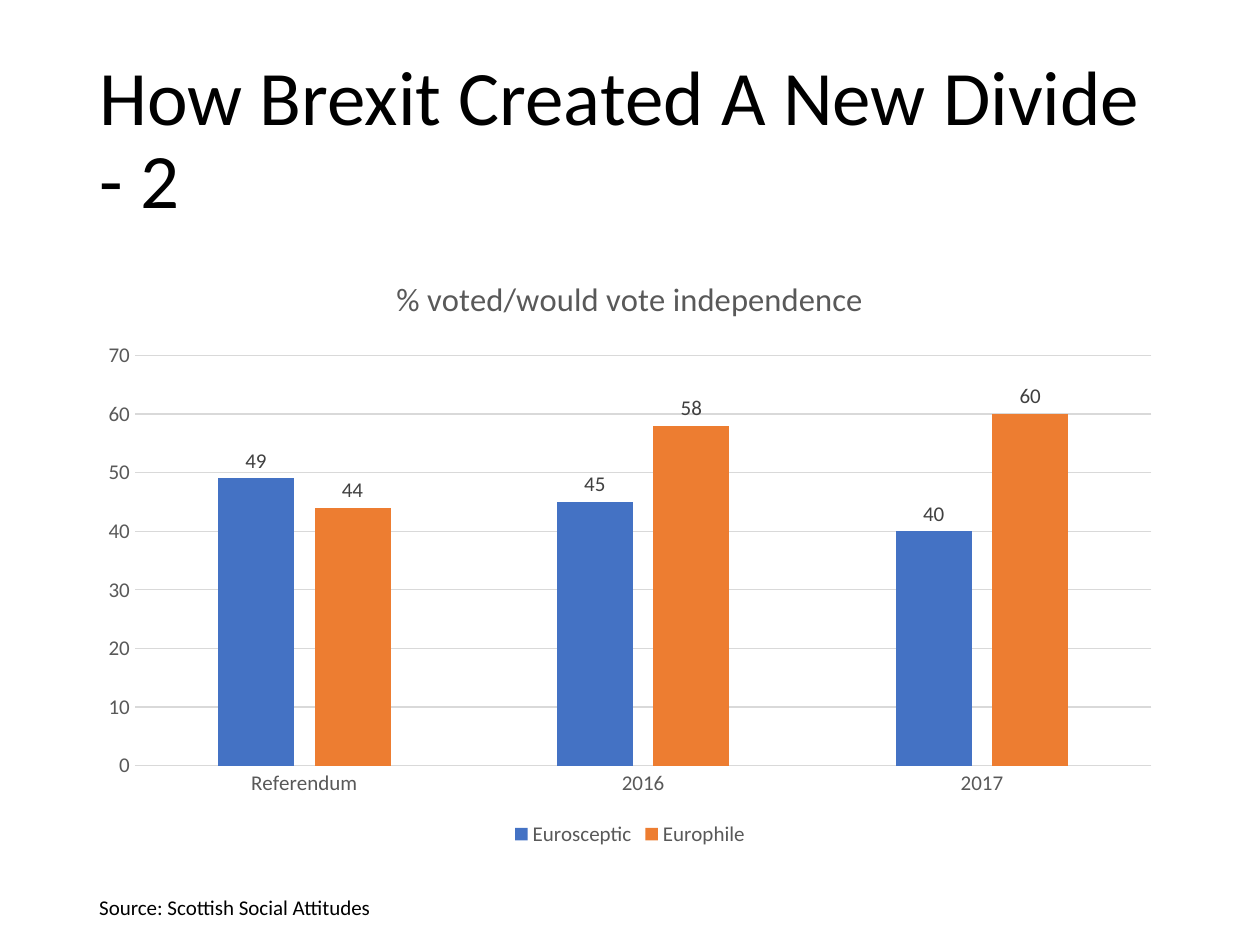
from pptx import Presentation
from pptx.chart.data import CategoryChartData
from pptx.dml.color import RGBColor
from pptx.enum.chart import XL_CHART_TYPE as ChartType
from pptx.enum.chart import XL_LABEL_POSITION as LabelPosition
from pptx.enum.chart import XL_LEGEND_POSITION as LegendPosition
from pptx.enum.chart import XL_TICK_MARK as TickMark
from pptx.enum.text import MSO_ANCHOR as Anchor
from pptx.util import Cm, Pt

FONT = "Calibri"
COLOURS = {
    "text": "000000",
    "axis": "595959",
    "label": "404040",
    "grid": "D9D9D9",
    "Eurosceptic": "4472C4",
    "Europhile": "ED7D31",
}
CATEGORIES = ["Referendum", "2016", "2017"]
SERIES = {"Eurosceptic": [49, 45, 40], "Europhile": [44, 58, 60]}
LEFT, WIDTH = 1.75, 21.9


def colour(name):
    return RGBColor.from_string(COLOURS[name])


def style_font(font, size, colour_name):
    font.name = FONT
    font.size = Pt(size)
    font.bold = False
    font.color.rgb = colour(colour_name)


def style_line(line):
    line.color.rgb = colour("grid")
    line.width = Pt(0.75)


def add_text(slide, text, top, width, height, size, anchor=Anchor.TOP, spacing=1.0):
    box = slide.shapes.add_textbox(Cm(LEFT), Cm(top), Cm(width), Cm(height))
    frame = box.text_frame
    frame.word_wrap = True
    frame.vertical_anchor = anchor
    paragraph = frame.paragraphs[0]
    paragraph.line_spacing = spacing
    run = paragraph.add_run()
    run.text = text
    style_font(run.font, size, "text")


def style_axes(chart):
    for axis in (chart.category_axis, chart.value_axis):
        axis.major_tick_mark = axis.minor_tick_mark = TickMark.NONE
        style_font(axis.tick_labels.font, 12, "axis")
    style_line(chart.category_axis.format.line)
    value_axis = chart.value_axis
    value_axis.minimum_scale, value_axis.maximum_scale = 0, 70
    value_axis.major_unit = 10
    value_axis.format.line.fill.background()
    style_line(value_axis.major_gridlines.format.line)


def style_series(series):
    series.format.fill.solid()
    series.format.fill.fore_color.rgb = colour(series.name)
    labels = series.data_labels
    labels.show_value = True
    labels.position = LabelPosition.OUTSIDE_END
    style_font(labels.font, 12, "label")


def add_column_chart(slide, title, top, height):
    data = CategoryChartData()
    data.categories = CATEGORIES
    for name, values in SERIES.items():
        data.add_series(name, values)
    chart = slide.shapes.add_chart(
        ChartType.COLUMN_CLUSTERED, Cm(LEFT), Cm(top), Cm(WIDTH), Cm(height), data
    ).chart
    style_font(chart.font, 10, "text")

    # Chart title
    chart.has_title = True
    run = chart.chart_title.text_frame.paragraphs[0].add_run()
    run.text = title
    style_font(run.font, 18.6, "axis")
    chart.chart_title.include_in_layout = False

    # Legend
    chart.has_legend = True
    chart.legend.position = LegendPosition.BOTTOM
    chart.legend.include_in_layout = False
    style_font(chart.legend.font, 12, "axis")

    # Axes and columns
    style_axes(chart)
    plot = chart.plots[0]
    plot.vary_by_categories = False
    plot.gap_width = 219
    plot.overlap = -27
    for series in plot.series:
        style_series(series)


def main():
    presentation = Presentation()
    presentation.slide_width, presentation.slide_height = Cm(25.4), Cm(19.05)
    slide = presentation.slides.add_slide(presentation.slide_layouts[6])

    # Heading
    add_text(slide, "How Brexit Created A New Divide - 2", 1.02, WIDTH, 3.68, 44,
             Anchor.MIDDLE, 0.9)
    # Chart
    add_column_chart(slide, "% voted/would vote independence", 5.08, 12.09)
    # Source line
    add_text(slide, "Source: Scottish Social Attitudes", 17.91, 17.65, 0.76, 12)

    presentation.save("out.pptx")


if __name__ == "__main__":
    main()
